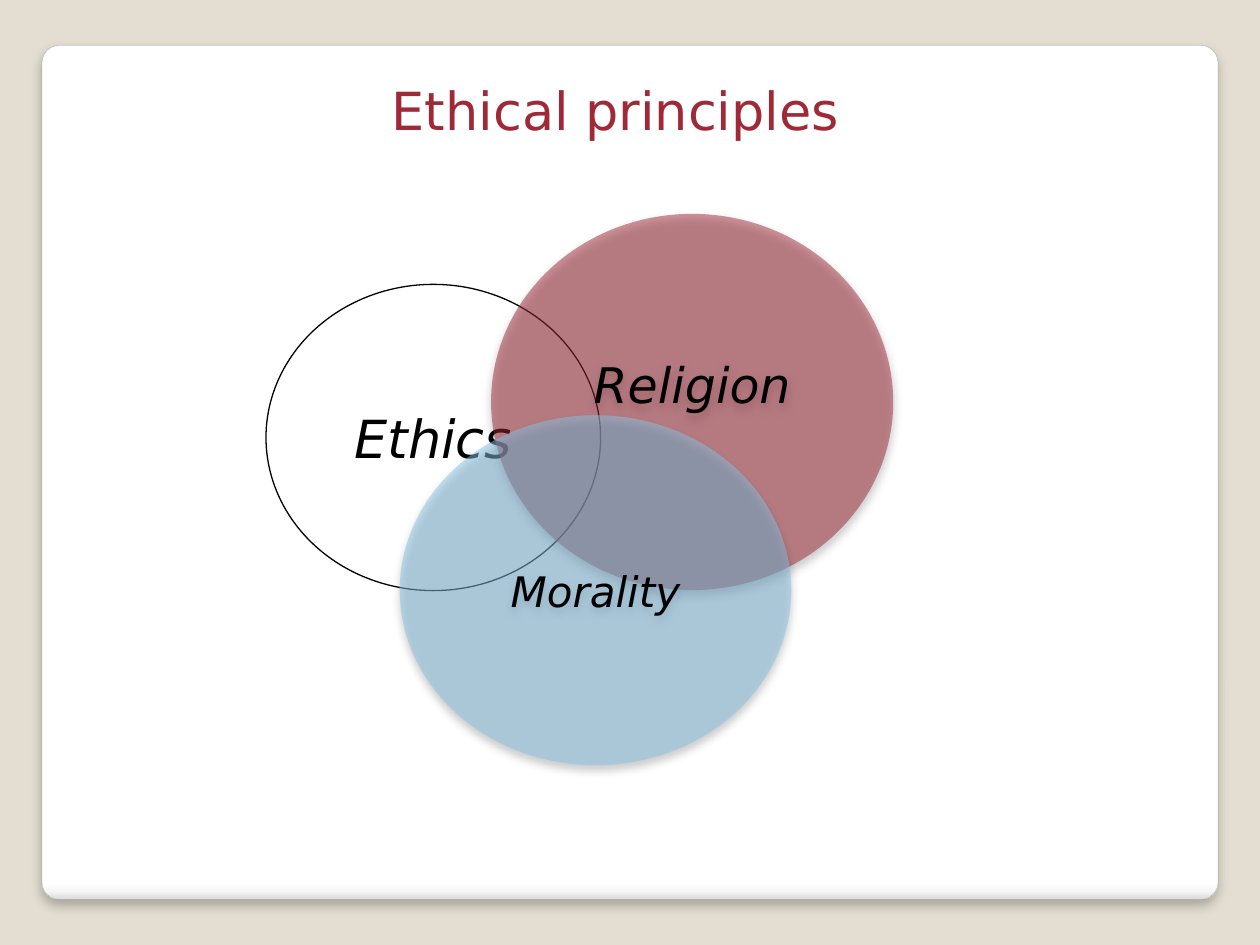
from lxml.etree import SubElement
from pptx import Presentation
from pptx.dml.color import RGBColor
from pptx.enum.shapes import MSO_SHAPE as Preset
from pptx.enum.text import MSO_ANCHOR as Anchor, MSO_AUTO_SIZE as AutoSize, PP_ALIGN as Align
from pptx.oxml.ns import qn
from pptx.util import Pt

FONT = "DejaVu Sans"
COLORS = {"backdrop": "E3DED1", "white": "FFFFFF", "edge": "A4A4A4",
          "red": "9F2936", "blue": "89C3E5", "black": "000000"}
TITLE = {"text": "Ethical principles", "at": (216.7, 41, 270.7, 43.9), "size": 30}
PANEL = {"at": (24, 26, 672, 488), "shadow": (25, 6, 4),
         "stops": [(0, "FFFFFF"), (98, "FFFFFF"), (99, "F7F7F7"), (100, "DADADA")]}
CIRCLE_SHADOW = (40, 5.2, 3)
CIRCLES = [
    {"text": "Ethics", "at": (152, 162.5, 191.2, 175), "fill": "white", "size": 30,
     "outlined": True, "lift": 0},
    {"text": "Religion", "at": (280.6, 122.2, 229.8, 215), "fill": "red", "size": 28,
     "outlined": False, "lift": 21},
    {"text": "Morality", "at": (228.4, 237.3, 223.8, 200), "fill": "blue", "size": 24,
     "outlined": False, "lift": 0},
]


def rgb(name):
    return RGBColor.from_string(COLORS[name])


def add_color(parent, color, opacity=None):
    node = SubElement(parent, qn("a:srgbClr"), val=color)
    if opacity is not None:
        SubElement(node, qn("a:alpha"), val=str(opacity * 1000))


def add_shadow(shape, opacity, blur, distance):
    """Cast a soft black shadow straight down."""
    effects = shape.element.spPr.find(qn("a:effectLst"))
    shadow = SubElement(effects, qn("a:outerShdw"), blurRad=str(Pt(blur)),
                        dist=str(Pt(distance)), dir="5400000", algn="t", rotWithShape="0")
    add_color(shadow, COLORS["black"], opacity)


def add_shape(slide, preset, at):
    shape = slide.shapes.add_shape(preset, *map(Pt, at))
    shape.shadow.inherit = False
    return shape


def write(frame, text, size, color, align, italic=False):
    para = frame.paragraphs[0]
    para.alignment = align
    span = para.add_run()
    span.text = text
    formats = {"name": FONT, "size": Pt(size), "italic": italic, "bold": False}
    for key, value in formats.items():
        setattr(span.font, key, value)
    span.font.color.rgb = rgb(color)


def add_panel(slide):
    panel = add_shape(slide, Preset.ROUNDED_RECTANGLE, PANEL["at"])
    panel.adjustments[0] = 0.02
    panel.fill.gradient()
    panel.fill.gradient_angle = 270
    stops = panel.element.spPr.find(".//" + qn("a:gsLst"))
    for stop in list(stops):
        stops.remove(stop)
    for position, color in PANEL["stops"]:
        add_color(SubElement(stops, qn("a:gs"), pos=str(position * 1000)), color)
    panel.line.color.rgb = rgb("edge")
    panel.line.width = Pt(0.16)
    add_shadow(panel, *PANEL["shadow"])


def add_circle(slide, circle):
    shape = add_shape(slide, Preset.OVAL, circle["at"])
    shape.fill.solid()
    shape.fill.fore_color.rgb = rgb(circle["fill"])
    color = shape.element.spPr.find(qn("a:solidFill")).find(qn("a:srgbClr"))
    SubElement(color, qn("a:alpha"), val="50000")
    if circle["outlined"]:
        shape.line.color.rgb = rgb("black")
        shape.line.width = Pt(0.75)
    else:
        shape.line.fill.background()
        add_shadow(shape, *CIRCLE_SHADOW)
    frame = shape.text_frame
    frame.vertical_anchor = Anchor.MIDDLE
    frame.margin_bottom = Pt(3.6 + circle["lift"])
    write(frame, circle["text"], circle["size"], "black", Align.CENTER, italic=True)


def place_title(slide):
    title = slide.shapes.title
    for key, value in zip(("left", "top", "width", "height"), TITLE["at"]):
        setattr(title, key, Pt(value))
    frame = title.text_frame
    formats = {"word_wrap": False, "auto_size": AutoSize.NONE, "vertical_anchor": Anchor.TOP}
    for key, value in formats.items():
        setattr(frame, key, value)
    write(frame, TITLE["text"], TITLE["size"], "red", Align.LEFT)
    title.element.getparent().append(title.element)  # bring in front of the panel


def main():
    deck = Presentation()
    deck.slide_width, deck.slide_height = Pt(720), Pt(540)
    slide = deck.slides.add_slide(deck.slide_layouts[5])
    slide.background.fill.solid()
    slide.background.fill.fore_color.rgb = rgb("backdrop")
    add_panel(slide)
    for circle in CIRCLES:
        add_circle(slide, circle)
    place_title(slide)
    deck.save("out.pptx")


if __name__ == "__main__":
    main()
